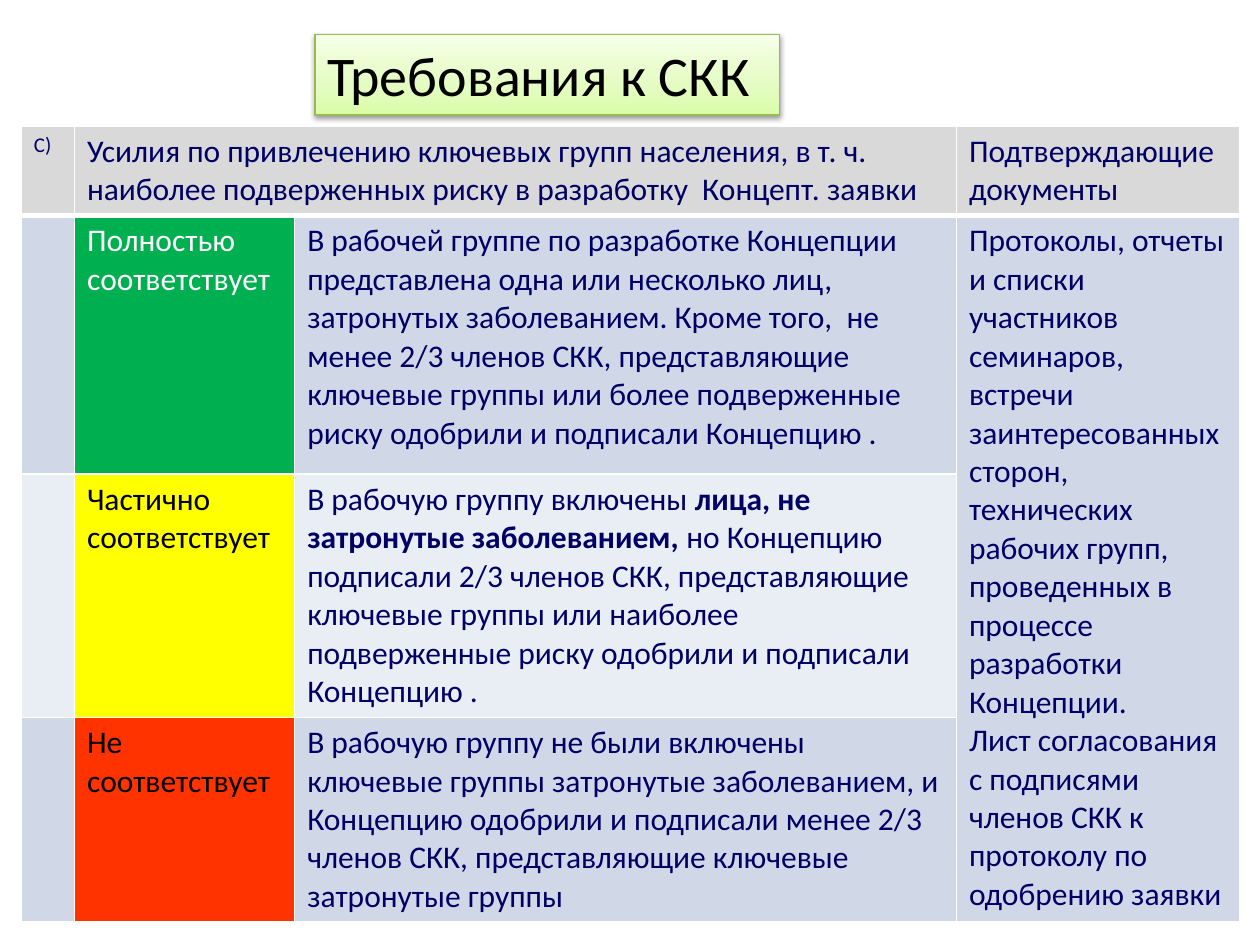
from copy import deepcopy

from lxml.etree import SubElement
from pptx import Presentation
from pptx.dml.color import RGBColor
from pptx.enum.shapes import MSO_SHAPE
from pptx.enum.text import MSO_ANCHOR, PP_ALIGN
from pptx.oxml.ns import qn
from pptx.util import Cm, Pt

NAVY, WHITE, BLACK = "000066", "FFFFFF", "000000"
GREY, BAND, PALE = "D9D9D9", "D0D8E8", "E9EDF4"
COLUMN_WIDTHS = [1.07, 4.44, 13.34, 5.71]
ROW_HEIGHTS = [1.78, 5.21, 4.88, 4.06]
HEADER = [
    "С)",
    "Усилия по привлечению ключевых групп населения, в т. ч. наиболее подверженных риску "
    "в разработку  Концепт. заявки",
    "",
    "Подтверждающие документы",
]
DOCUMENTS = [
    "Протоколы, отчеты и списки участников семинаров, встречи заинтересованных сторон, "
    "технических рабочих групп, проведенных в процессе разработки Концепции.",
    "Лист согласования с подписями членов СКК к протоколу по одобрению заявки",
]
LEVELS = [
    ("Полностью соответствует", "00B050", WHITE, BAND, [
        ("В рабочей группе по разработке Концепции представлена одна или несколько лиц, "
         "затронутых заболеванием. Кроме того,  не менее 2/3 членов СКК, представляющие "
         "ключевые группы или более подверженные риску одобрили и подписали Концепцию .", False)]),
    ("Частично соответствует", "FFFF00", BLACK, PALE, [
        ("В рабочую группу включены ", False),
        ("лица, не затронутые заболеванием,", True),
        (" но Концепцию подписали 2/3 членов СКК, представляющие ключевые группы или наиболее "
         "подверженные риску одобрили и подписали Концепцию .", False)]),
    ("Не соответствует", "FF3300", BLACK, BAND, [
        ("В рабочую группу не были включены ключевые группы затронутые заболеванием, и "
         "Концепцию одобрили и подписали менее 2/3 членов СКК, представляющие ключевые "
         "затронутые группы", False)]),
]


def color(value):
    """Turn a hex string into a colour."""
    return RGBColor.from_string(value)


def write(frame, paragraphs, ink=NAVY, size=18):
    """Fill a text frame with paragraphs made of (text, bold) spans."""
    for index, spans in enumerate(paragraphs):
        para = frame.add_paragraph() if index else frame.paragraphs[0]
        para.alignment = PP_ALIGN.LEFT
        for text, bold in spans:
            span = para.add_run()
            span.text = text
            for name, value in {"name": "Calibri", "size": Pt(size), "bold": bold}.items():
                setattr(span.font, name, value)
            span.font.color.rgb = color(ink)


def style_cell(cell, fill, bottom=1):
    """Give a cell its white borders and its fill."""
    properties = cell._tc.get_or_add_tcPr()
    for side, width in {"L": 1, "R": 1, "T": 1, "B": bottom}.items():
        line = SubElement(properties, qn(f"a:ln{side}"), w=str(Pt(width)))
        SubElement(SubElement(line, qn("a:solidFill")), qn("a:srgbClr"), val=WHITE)
    cell.fill.solid()
    cell.fill.fore_color.rgb = color(fill)


def add_criteria_table(page):
    """Add the table of compliance levels and supporting documents."""
    table = page.shapes.add_table(
        len(ROW_HEIGHTS), len(COLUMN_WIDTHS), Cm(0.43), Cm(2.54),
        Cm(sum(COLUMN_WIDTHS)), Cm(sum(ROW_HEIGHTS))).table
    for column, width in zip(table.columns, COLUMN_WIDTHS):
        column.width = Cm(width)
    for row, height in zip(table.rows, ROW_HEIGHTS):
        row.height = Cm(height)
    table.cell(0, 1).merge(table.cell(0, 2))
    table.cell(1, 3).merge(table.cell(3, 3))
    for index, text in enumerate(HEADER):
        cell = table.cell(0, index)
        style_cell(cell, GREY, bottom=3)
        if text:
            write(cell.text_frame, [[(text, False)]], size=18 if index else 12)
    for row, (level, fill, ink, band, spans) in enumerate(LEVELS, start=1):
        for column, shade in enumerate([band, fill, band, BAND]):
            style_cell(table.cell(row, column), shade)
        write(table.cell(row, 1).text_frame, [[(level, False)]], ink)
        write(table.cell(row, 2).text_frame, [spans])
    write(table.cell(1, 3).text_frame, [[(text, False)] for text in DOCUMENTS])


def add_gradient(box, stops, angle):
    """Fill a shape with a linear gradient of (percent, colour) stops."""
    box.fill.gradient()
    box.fill.gradient_angle = angle
    stop_list = box._element.spPr.find(qn("a:gradFill")).find(qn("a:gsLst"))
    while len(stop_list) < len(stops):
        stop_list.append(deepcopy(stop_list[0]))
    for stop, (percent, value) in zip(box.fill.gradient_stops, stops):
        stop.position = percent / 100
        stop.color.rgb = color(value)


def add_shadow(box):
    """Add a soft black shadow below a shape."""
    box.shadow.inherit = False
    effects = box._element.spPr.find(qn("a:effectLst"))
    shadow = SubElement(effects, qn("a:outerShdw"), blurRad=str(Pt(3.1)), dist=str(Pt(1.6)),
                        dir="5400000", rotWithShape="0")
    shade = SubElement(shadow, qn("a:srgbClr"), val=BLACK)
    SubElement(shade, qn("a:alpha"), val="38000")


def add_title(page, text):
    """Add the green title box."""
    box = page.shapes.add_shape(MSO_SHAPE.RECTANGLE, Cm(6.35), Cm(0.69), Cm(9.37), Cm(1.63))
    add_gradient(box, [(0, "DAFDA7"), (35, "E4FCC2"), (100, "F5FFE7")], 90)
    box.line.color.rgb = color("98B955")
    box.line.width = Pt(0.75)
    add_shadow(box)
    for name, value in {"word_wrap": True, "vertical_anchor": MSO_ANCHOR.TOP}.items():
        setattr(box.text_frame, name, value)
    write(box.text_frame, [[(text, False)]], BLACK, 32)


def main():
    """Build the slide and save the deck."""
    deck = Presentation()
    deck.slide_width, deck.slide_height = Cm(25.4), Cm(19.05)
    page = deck.slides.add_slide(deck.slide_layouts[6])
    add_criteria_table(page)
    add_title(page, "Требования к СКК")
    deck.save("out.pptx")


if __name__ == "__main__":
    main()
